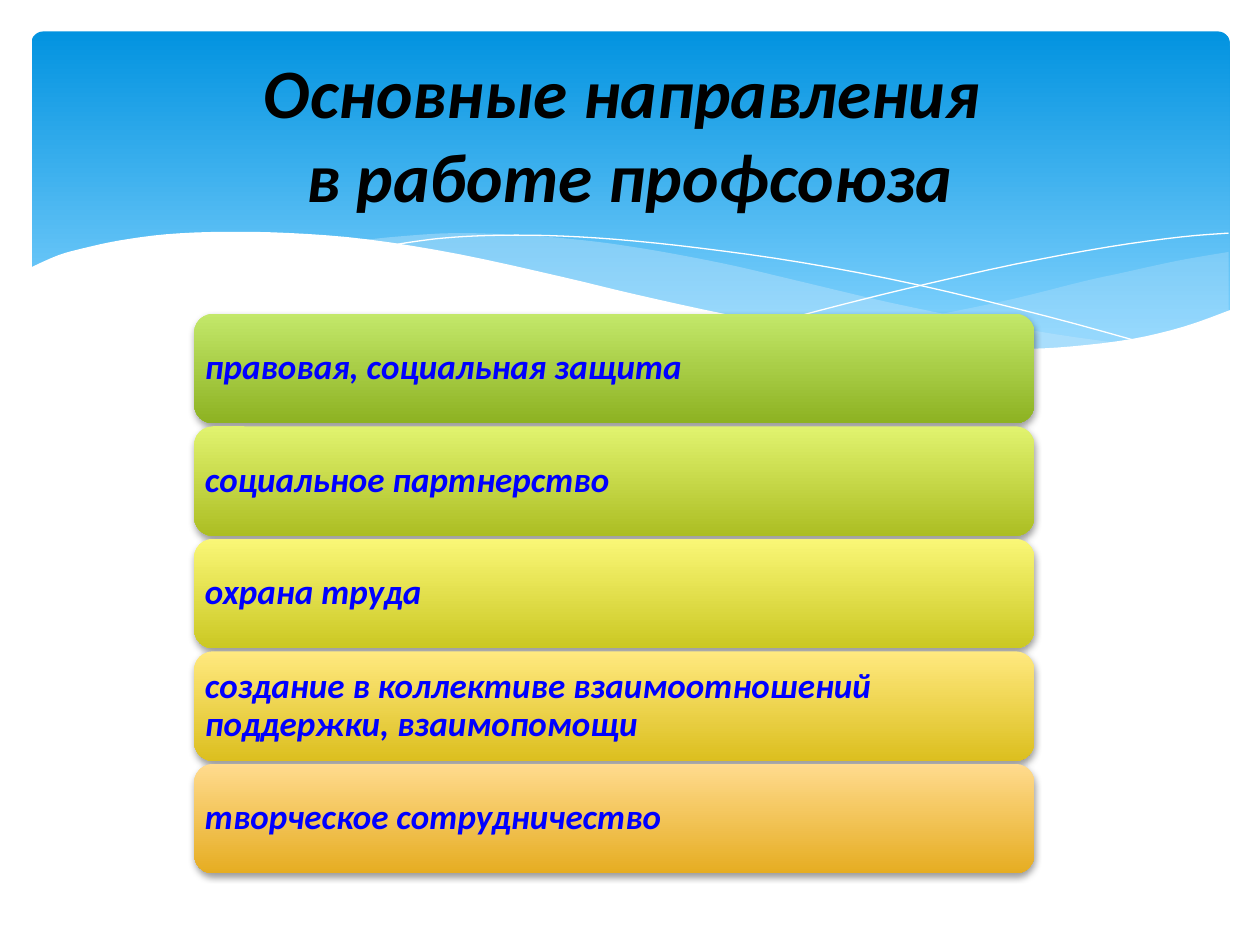
from lxml.etree import SubElement
from pptx import Presentation
from pptx.dml.color import RGBColor
from pptx.enum.shapes import MSO_SHAPE as Shape
from pptx.enum.text import MSO_ANCHOR as Anchor, PP_ALIGN as Align
from pptx.oxml.ns import qn
from pptx.util import Pt

TITLE = "Основные направления \vв работе профсоюза"
ITEMS = [
    ("правовая, социальная защита", "C3E86A", "8DB222"),
    ("социальное партнерство", "E1F36F", "ACBE23"),
    ("охрана труда", "FAF777", "CBC823"),
    ("создание в коллективе взаимоотношений поддержки, взаимопомощи",
     "FFE97F", "DCBF1F"),
    ("творческое сотрудничество", "FFDB8E", "E6AD22"),
]

RIGHT = [
    [(702, 144), (673, 149), (641, 156), (620, 160.6), (580, 170.6),
     (542, 178.6), (508, 185), (476, 190.8)],
    [(476, 190.8), (517, 196), (553, 198.7), (586, 200), (615, 199.4),
     (640, 197.3), (663, 190.8), (683, 185), (702, 177.8)],
]
MIDDLE = [
    [(643, 196.6), (603, 191), (558, 183), (508, 172.8), (453, 159.8),
     (420, 152), (390, 146), (361, 141), (335, 137.5), (302, 134.6),
     (260, 133.2), (225, 135.4), (206, 137.5)],
    [(206, 137.5), (246, 143.3), (291, 152), (323, 159.8), (382, 172.8),
     (433, 183.6), (479, 191.5), (521, 197), (557, 199.4), (589, 200.2),
     (617, 199.4), (643, 196.6)],
]
FRONT = [
    [(703.5, 177), (677, 186.5), (647, 193.7), (612, 198), (582, 199.4),
     (548, 198), (510, 194.4), (467, 188.6), (417, 180), (362, 168),
     (322, 158.4), (263, 145.4), (210, 136.8), (166, 133.2), (127, 132.5),
     (95, 133.9), (68, 137.5), (48, 141.8), (33, 146), (16.5, 153.4)],
    [(16.5, 237), (703.5, 237)],
]
FALLING = [[(222.5, 140.4), (236, 138.2), (254, 136), (279, 134.6),
            (312, 134.6), (352, 136.8), (400, 141.8), (458, 150),
            (524, 162.7), (598, 180.7), (653, 195.8)]]
RISING = [[(441, 185), (470, 177), (518, 165), (580, 151), (634, 141),
           (675, 135.4), (702, 133.2)]]
WAVES = [(RIGHT, "C6E7FC", 29), (MIDDLE, "C6E7FC", 40),
         (FALLING, None, 100), (RISING, None, 100), (FRONT, "FFFFFF", 100)]

LEFT, TOP, WIDTH, HEIGHT, PITCH = 111, 179.3, 480, 62.6, 64.3
STEPS = 4


def paint(color, code):
    color.rgb = RGBColor.from_string(code)


def smooth(keys):
    ends = [keys[0], *keys, keys[-1]]
    for a, b, c, d in zip(ends, ends[1:], ends[2:], ends[3:]):
        for step in range(STEPS):
            t = step / STEPS
            yield tuple(
                q + t / 2 * (r - p + t * (2 * p - 5 * q + 4 * r - s
                                          + t * (3 * (q - r) + s - p)))
                for p, q, r, s in zip(a, b, c, d))
    yield keys[-1]


def add_wave(shapes, parts, code, alpha):
    dots = [(Pt(x), Pt(y)) for keys in parts for x, y in smooth(keys)]
    pen = shapes.build_freeform(*dots[0], scale=1.0)
    pen.add_line_segments(dots[1:], close=code is not None)
    wave = pen.convert_to_shape()
    wave.shadow.inherit = False
    if code is None:
        wave.fill.background()
        paint(wave.line.color, "FFFFFF")
        wave.line.width = Pt(0)
        return
    wave.line.fill.background()
    wave.fill.solid()
    paint(wave.fill.fore_color, code)
    tint = wave._element.spPr.find(".//" + qn("a:srgbClr"))
    SubElement(tint, qn("a:alpha"), val=str(alpha * 1000))


def add_panel(shapes, box, round_, start, end, stop=1.0):
    panel = shapes.add_shape(Shape.ROUNDED_RECTANGLE, *map(Pt, box))
    panel.adjustments[0] = round_
    panel.shadow.inherit = False
    panel.line.fill.background()
    panel.fill.gradient()
    panel.fill.gradient_angle = 270
    stops = panel.fill.gradient_stops
    stops[1].position = stop
    for mark, code in zip(stops, (start, end)):
        paint(mark.color, code)
    return panel


def add_shadow(panel):
    list_ = panel._element.spPr.find(qn("a:effectLst"))
    shade = SubElement(list_, qn("a:outerShdw"), blurRad=str(Pt(4)),
                       dist=str(Pt(2)), dir="5400000", rotWithShape="0")
    tint = SubElement(shade, qn("a:srgbClr"), val="000000")
    SubElement(tint, qn("a:alpha"), val="38000")


def write(shape, text, size, code, align, pad):
    frame = shape.text_frame
    frame.word_wrap = True
    frame.vertical_anchor = Anchor.MIDDLE
    frame.margin_left = frame.margin_right = Pt(pad)
    frame.text = text
    para = frame.paragraphs[0]
    para.alignment = align
    font = para.font
    font.name, font.size = "Calibri", Pt(size)
    font.bold = font.italic = True
    paint(font.color, code)
    return para


def main():
    deck = Presentation()
    deck.slide_width, deck.slide_height = Pt(720), Pt(540)
    shapes = deck.slides.add_slide(deck.slide_layouts[6]).shapes

    add_panel(shapes, (18, 18, 684.7, 194.4), 0.034, "0293E0", "83D3FE", 0.9)
    for wave in WAVES:
        add_wave(shapes, *wave)

    title = shapes.add_textbox(Pt(36), Pt(26.6), Pt(648), Pt(98.6))
    write(title, TITLE, 39.6, "000000", Align.CENTER, 7.2)

    for row, (text, start, end) in enumerate(ITEMS):
        box = LEFT, TOP + row * PITCH, WIDTH, HEIGHT
        panel = add_panel(shapes, box, 0.17, start, end)
        add_shadow(panel)
        para = write(panel, text, 20, "0000FF", Align.LEFT, 3)
        para.line_spacing = 0.9

    deck.save("out.pptx")


if __name__ == "__main__":
    main()
